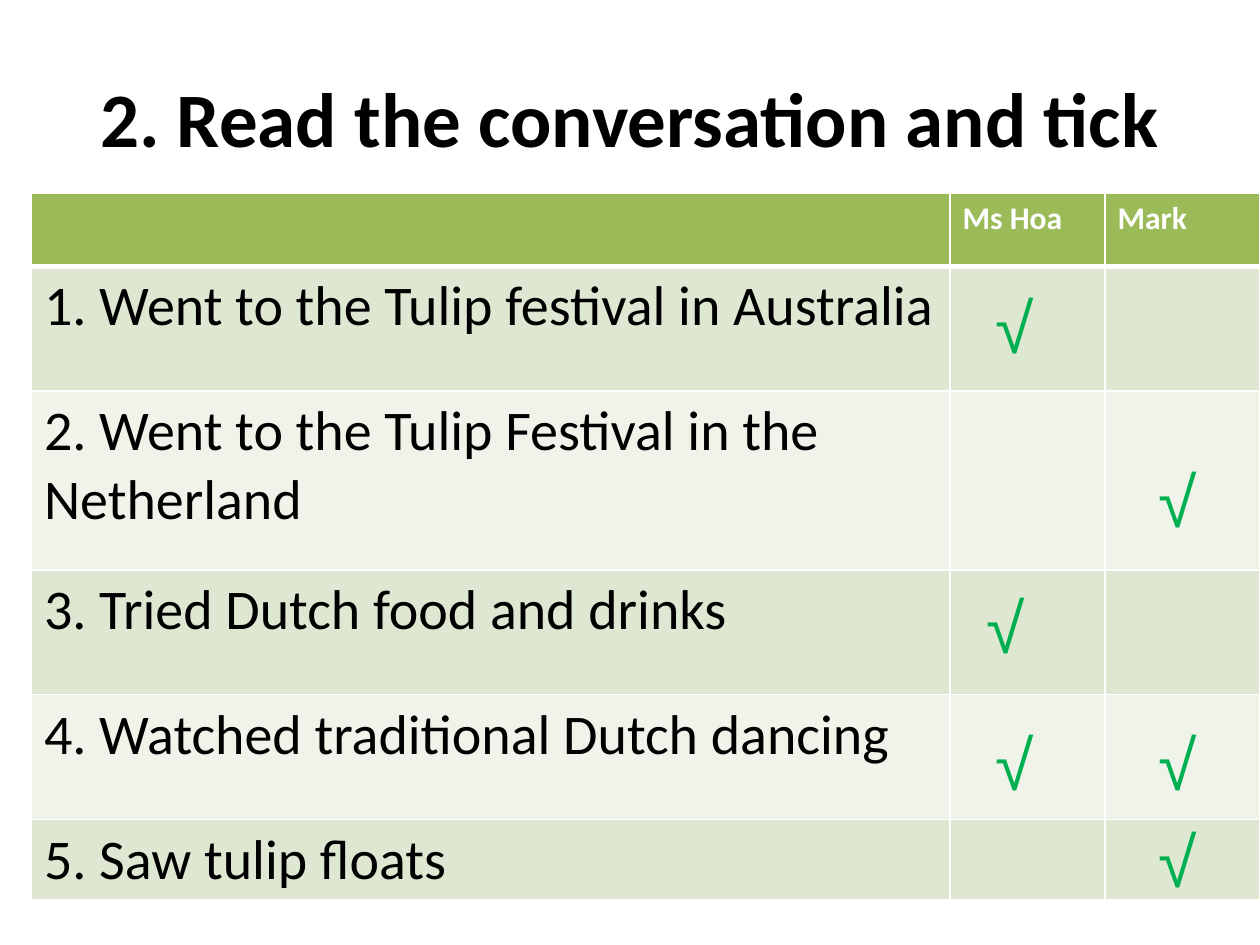
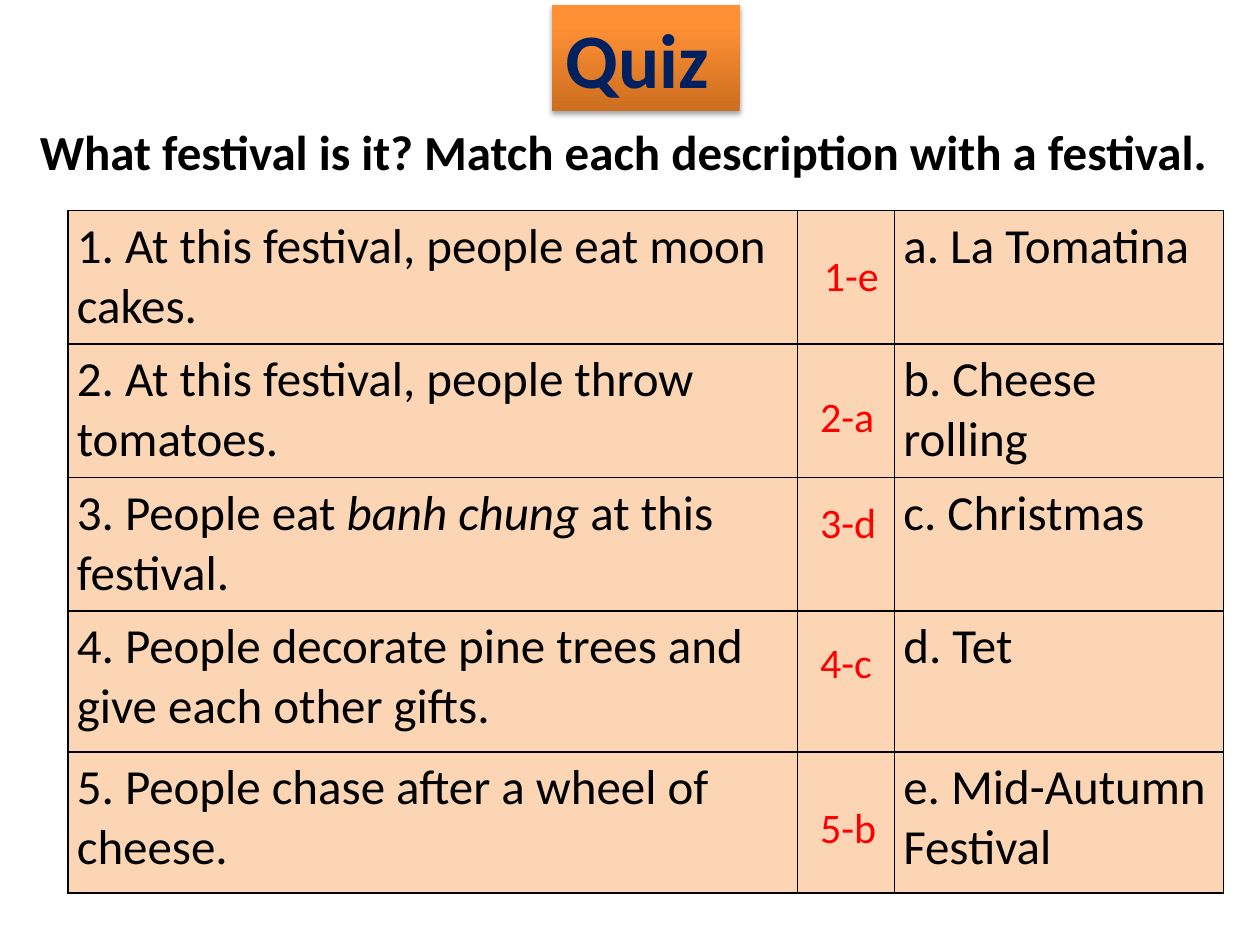
from copy import deepcopy
from dataclasses import dataclass
from typing import NamedTuple

from lxml.etree import SubElement
from pptx import Presentation
from pptx.dml.color import RGBColor
from pptx.enum.shapes import MSO_SHAPE
from pptx.enum.text import MSO_ANCHOR, PP_ALIGN
from pptx.oxml.ns import qn
from pptx.util import Pt


@dataclass(frozen=True)
class Theme:
    font: str = "Calibri"
    tick_font: str = "Arial"
    black: str = "000000"
    white: str = "FFFFFF"
    green: str = "9BBB59"
    green_bands: tuple = ("DEE7D1", "EFF3EA")
    peach: str = "FCD5B5"
    tick: str = "00B050"
    answer: str = "FF0000"
    navy: str = "002060"
    badge_stops: tuple = ((0, "CC6E20"), (0.8, "FF9034"), (1, "FF9136"))
    title_size: int = 44
    tick_size: int = 40
    statement_size: int = 32
    quiz_size: int = 28
    answer_size: int = 24
    header_size: int = 18


T = Theme()


class Box(NamedTuple):
    left: float
    top: float
    width: float
    height: float

    def lengths(self) -> list:
        return [Pt(v) for v in self]


class Style(NamedTuple):
    size: int
    color: str = T.black
    bold: bool = False
    font: str = T.font


class Mark(NamedTuple):
    """A short answer laid over a table."""
    text: str
    left: float
    top: float


@dataclass(frozen=True)
class Grid:
    left: float
    top: float
    widths: tuple
    heights: tuple
    cells: tuple
    line: str
    margin: float
    header_line: float = 1


TITLE = Style(T.title_size, bold=True)
PROMPT = Style(T.quiz_size, bold=True)
TICK = Style(T.tick_size, T.tick, font=T.tick_font)
ANSWER = Style(T.answer_size, T.answer)

TICK_GRID = Grid(
    18, 110.2, (524.9, 88.6, 88.6), (42, 71.3, 102.2, 71.3, 71.3, 45.4),
    (("", "Ms Hoa", "Mark"),
     ("1. Went to the Tulip festival in Australia", "", ""),
     ("2. Went to the Tulip Festival in the Netherland", "", ""),
     ("3. Tried Dutch food and drinks", "", ""),
     ("4. Watched traditional Dutch dancing", "", ""),
     ("5. Saw tulip floats", "", "")),
    T.white, 7.2, header_line=3)

HOA_X, MARK_X = 561.6, 655.2
TICKS = [Mark("√", x, y) for x, y in (
    (HOA_X, 158.4), (MARK_X, 257.8), (HOA_X - 5, 329.8),
    (MARK_X, 408.2), (HOA_X, 408.2), (MARK_X, 463.7))]

# Asterisks enclose italic words.
QUIZ_GRID = Grid(
    38.9, 120.2, (416.9, 55.4, 187.9), (76.3, 76.3, 76.3, 80.6, 80.6),
    (("1. At this festival, people eat moon cakes.", "", "a. La Tomatina"),
     ("2. At this festival, people throw tomatoes.", "", "b. Cheese rolling"),
     ("3. People eat *banh chung *at this festival.", "", "c. Christmas"),
     ("4. People decorate pine trees and give each other gifts.", "", "d. Tet"),
     ("5. People chase after a wheel of cheese.", "", "e. Mid-Autumn Festival")),
    T.black, 5.04)

ANSWER_X = 461.5
ANSWERS = [Mark("1-e", ANSWER_X + 2.2, 139), Mark("2-a", ANSWER_X, 219.6),
           Mark("3-d", ANSWER_X, 280), Mark("4-c", ANSWER_X, 360),
           Mark("5-b", ANSWER_X, 454.3)]


def rgb(color: str) -> RGBColor:
    return RGBColor.from_string(color)


def write(tf, text: str, style: Style, align=PP_ALIGN.LEFT) -> None:
    """Fill a text frame; words between asterisks become italic."""
    p = tf.paragraphs[0]
    p.alignment = align
    first, *rest = text.split("*")
    p.text = first
    for part in rest:
        p.add_run().text = part
    for i, r in enumerate(p.runs):
        r.font.name, r.font.size = style.font, Pt(style.size)
        r.font.bold, r.font.italic = style.bold, i % 2 == 1
        r.font.color.rgb = rgb(style.color)


def add_text(s, box: Box, text: str, style: Style, align=PP_ALIGN.LEFT):
    tf = s.shapes.add_textbox(*box.lengths()).text_frame
    tf.word_wrap = True
    write(tf, text, style, align)
    return tf


def add_marks(s, marks: list, width: float, height: float, style: Style) -> None:
    for mark in marks:
        add_text(s, Box(mark.left, mark.top, width, height), mark.text, style)


def set_borders(cell, color: str, top: float, bottom: float) -> None:
    """Draw the four sides; they must stand before the fill in tcPr."""
    tc_pr = cell._tc.get_or_add_tcPr()
    for side, width in (("L", 1), ("R", 1), ("T", top), ("B", bottom)):
        ln = SubElement(tc_pr, qn(f"a:ln{side}"), w=str(Pt(width)))
        SubElement(SubElement(ln, qn("a:solidFill")), qn("a:srgbClr"), val=color)


def add_grid(s, grid: Grid, look) -> None:
    """Add a table; look(row) gives the fill and text style of a row."""
    box = Box(grid.left, grid.top, sum(grid.widths), sum(grid.heights))
    table = s.shapes.add_table(
        len(grid.heights), len(grid.widths), *box.lengths()).table
    table.first_row = table.horz_banding = False
    for column, width in zip(table.columns, grid.widths):
        column.width = Pt(width)
    for i, (row, height) in enumerate(zip(table.rows, grid.heights)):
        row.height = Pt(height)
        fill, style = look(i)
        for cell, text in zip(row.cells, grid.cells[i]):
            cell.margin_left = cell.margin_right = Pt(grid.margin)
            set_borders(cell, grid.line,
                        grid.header_line if i == 1 else 1,
                        grid.header_line if i == 0 else 1)
            cell.fill.solid()
            cell.fill.fore_color.rgb = rgb(fill)
            if text:
                write(cell.text_frame, text, style)


def tick_row(i: int) -> tuple:
    if i == 0:
        return T.green, Style(T.header_size, T.white, bold=True)
    return T.green_bands[(i - 1) % 2], Style(T.statement_size)


def quiz_row(i: int) -> tuple:
    return T.peach, Style(T.quiz_size)


def add_badge(s, box: Box, text: str) -> None:
    """Add a shaded rectangle with a gradient and a soft shadow."""
    sp = s.shapes.add_shape(MSO_SHAPE.RECTANGLE, *box.lengths())
    sp.line.fill.background()
    sp.fill.gradient()
    sp.fill.gradient_angle = 90
    stops = sp._element.spPr.find(".//" + qn("a:gsLst"))
    stops.append(deepcopy(stops[-1]))
    for stop, (position, color) in zip(sp.fill.gradient_stops, T.badge_stops):
        stop.position = position
        stop.color.rgb = rgb(color)
    sp.shadow.inherit = False
    effects = sp._element.spPr.find(qn("a:effectLst"))
    shadow = SubElement(effects, qn("a:outerShdw"), blurRad=str(Pt(3.1)),
                        dist=str(Pt(1.8)), dir="5400000", rotWithShape="0")
    color = SubElement(shadow, qn("a:srgbClr"), val=T.black)
    SubElement(color, qn("a:alpha"), val="35000")
    sp.text_frame.word_wrap = False
    write(sp.text_frame, text, TITLE._replace(color=T.navy), PP_ALIGN.CENTER)


def build_tick_slide(s) -> None:
    tf = add_text(s, Box(36, 21.6, 648, 90), "2. Read the conversation and tick",
                  TITLE, PP_ALIGN.CENTER)
    tf.vertical_anchor = MSO_ANCHOR.MIDDLE
    add_grid(s, TICK_GRID, tick_row)
    add_marks(s, TICKS, 64.8, 55.4, TICK)


def build_quiz_slide(s) -> None:
    add_text(s, Box(15.7, 66.2, 704, 41),
             "What festival is it? Match each description with a festival.", PROMPT)
    add_grid(s, QUIZ_GRID, quiz_row)
    add_marks(s, ANSWERS, 94.3, 36, ANSWER)
    add_badge(s, Box(315.4, 2.9, 107.3, 60.5), "Quiz ")


def main() -> None:
    prs = Presentation()
    prs.slide_width, prs.slide_height = Pt(720), Pt(540)
    for build in (build_tick_slide, build_quiz_slide):
        build(prs.slides.add_slide(prs.slide_layouts[6]))
    prs.save("out.pptx")


if __name__ == "__main__":
    main()
